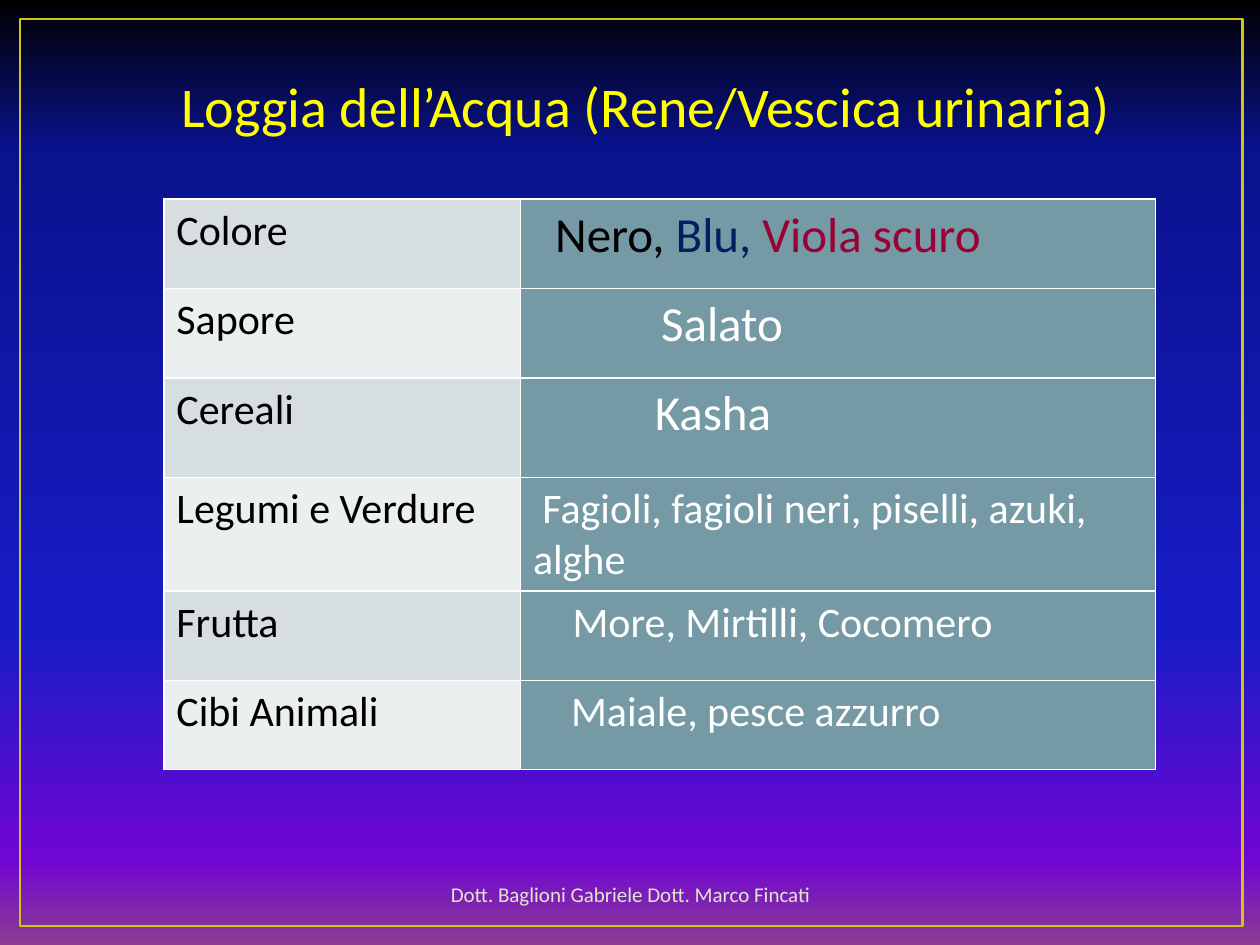
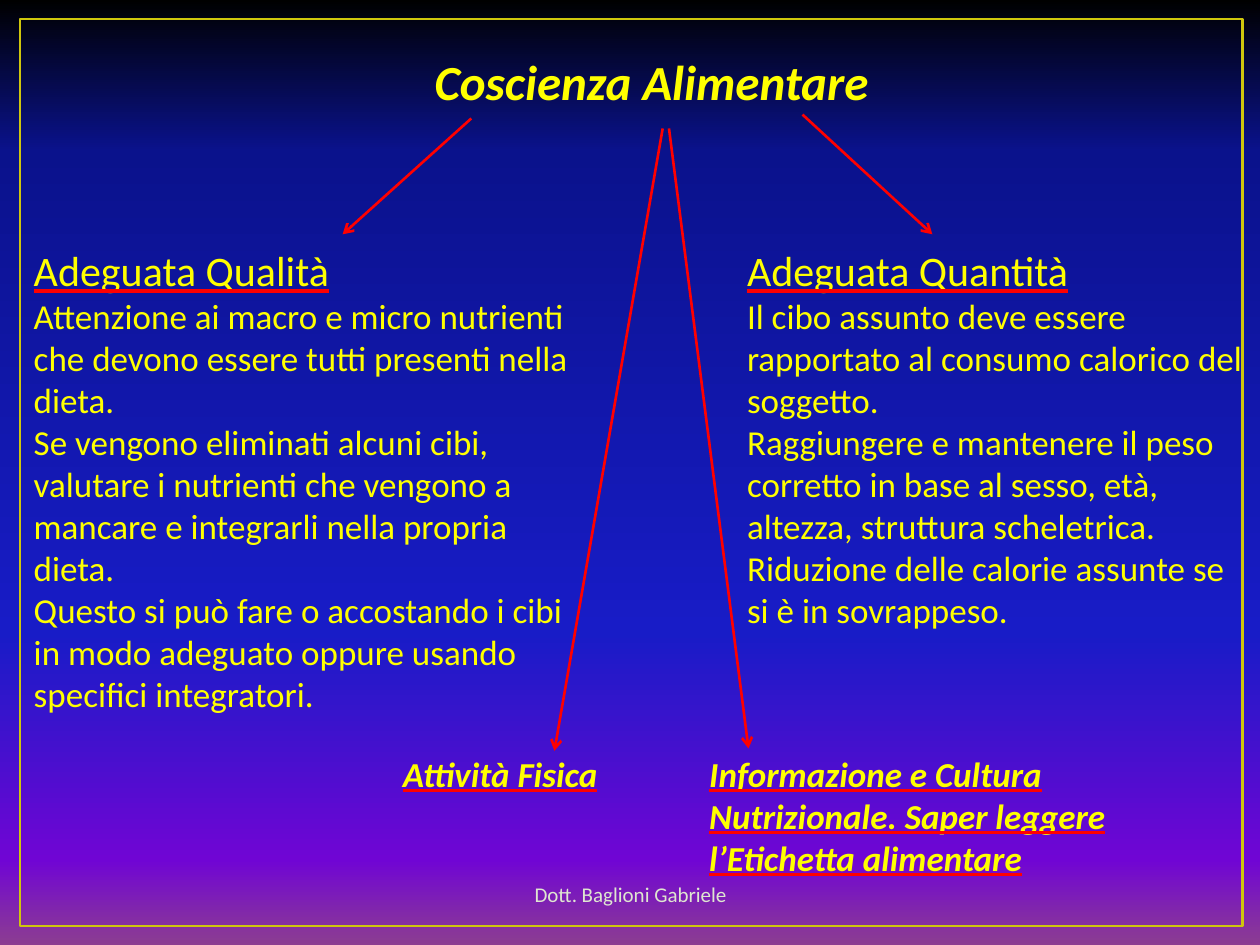
from typing import Any, NamedTuple

from lxml import etree
from pptx import Presentation
from pptx.dml.color import RGBColor
from pptx.enum import shapes, text
from pptx.oxml import ns
from pptx.util import Pt

BLACK = RGBColor(0, 0, 0)
WHITE = RGBColor(255, 255, 255)
YELLOW = RGBColor(255, 255, 0)
RED = RGBColor(255, 0, 0)
GOLD = RGBColor(0xCF, 0xC6, 0x0D)
PALE = RGBColor(0xDF, 0xE6, 0xD0)
NAVY = RGBColor(0, 0x20, 0x60)
WINE = RGBColor(0x99, 0, 0x33)
TEAL = RGBColor(0x75, 0x9A, 0xA5)
BANDS = [RGBColor(0xD6, 0xDE, 0xE1), RGBColor(0xEC, 0xEF, 0xF0)]
SKY = [
    (0, BLACK),
    (16, RGBColor(0x0A, 0x12, 0x8C)),
    (67, RGBColor(0x18, 0x1C, 0xC7)),
    (91, RGBColor(0x70, 0x05, 0xD4)),
    (100, RGBColor(0x8C, 0x3D, 0x91)),
]
FACE = "Calibri"
HEAD = {"size": Pt(24), "underline": True}
BODY = {"size": Pt(20)}
STRONG = {"size": Pt(20), "bold": True, "italic": True, "underline": True}


class Box(NamedTuple):
    left: float
    top: float
    width: float
    height: float


class Run(NamedTuple):
    words: str
    color: RGBColor
    form: dict[str, Any]


class Row(NamedTuple):
    label: str
    height: float
    indent: float
    runs: list[Run]


class Note(NamedTuple):
    box: Box
    lines: list[Run]


class Arrow(NamedTuple):
    x1: float
    y1: float
    x2: float
    y2: float


def apply(item: Any, form: dict[str, Any]) -> None:
    for name, value in form.items():
        setattr(item, name, value)


def node(parent: Any, tag: str, **attrs: str) -> Any:
    return etree.SubElement(parent, ns.qn(tag), attrs)


def solid(parent: Any, color: RGBColor) -> None:
    node(node(parent, "a:solidFill"), "a:srgbClr", val=str(color))


def write(para: Any, run: Run) -> None:
    part = para.add_run()
    part.text = run.words
    apply(part.font, {"name": FACE, "bold": False, **run.form})
    part.font.color.rgb = run.color
    if run.form.get("underline"):
        latin = part.font._element.find(ns.qn("a:latin"))
        under = etree.Element(ns.qn("a:uFill"))
        solid(under, RED)
        latin.addprevious(under)


def add_text(slide: Any, note: Note) -> Any:
    frame = slide.shapes.add_textbox(*map(Pt, note.box)).text_frame
    frame.word_wrap = True
    for i, run in enumerate(note.lines):
        para = frame.add_paragraph() if i else frame.paragraphs[0]
        write(para, run)
    return frame


def add_arrow(slide: Any, arrow: Arrow) -> None:
    link = slide.shapes.add_connector(
        shapes.MSO_CONNECTOR.STRAIGHT, *map(Pt, arrow))
    link.line.color.rgb = RED
    link.line.width = Pt(1.5)
    node(link.line._get_or_add_ln(), "a:tailEnd", type="arrow")
    node(link._element.spPr, "a:effectLst")


def add_page(deck: Any, credit: str) -> Any:
    slide = deck.slides.add_slide(deck.slide_layouts[6])
    fill = slide.background.fill
    fill.gradient()
    fill.gradient_angle = 270
    stops = slide.background._cSld.find(".//" + ns.qn("a:gsLst"))
    stops.clear()
    for place, color in SKY:
        stop = node(stops, "a:gs", pos=str(place * 1000))
        node(stop, "a:srgbClr", val=str(color))

    frame = slide.shapes.add_shape(
        shapes.MSO_SHAPE.RECTANGLE, *map(Pt, Box(11.5, 10.8, 698.4, 518.4)))
    frame.shadow.inherit = False
    frame.fill.background()
    frame.line.color.rgb = GOLD
    frame.line.width = Pt(1.5)

    foot = add_text(slide, Note(Box(223.2, 496.8, 274.3, 28.8),
                                [Run(credit, PALE, {"size": Pt(12)})]))
    foot.vertical_anchor = text.MSO_ANCHOR.MIDDLE
    foot.paragraphs[0].alignment = text.PP_ALIGN.CENTER
    return slide


def fill_cell(cell: Any, back: RGBColor, runs: list[Run], indent: float) -> None:
    props = cell._tc.get_or_add_tcPr()
    for side in ("a:lnL", "a:lnR", "a:lnT", "a:lnB"):
        solid(node(props, side, w=str(Pt(1))), WHITE)
    cell.fill.solid()
    cell.fill.fore_color.rgb = back
    para = cell.text_frame.paragraphs[0]
    if indent:
        apply_to = para._p.get_or_add_pPr()
        apply_to.set("marL", "0")
        apply_to.set("indent", str(Pt(indent)))
    for run in runs:
        write(para, run)


def add_grid(slide: Any, rows: list[Row]) -> None:
    high = sum(row.height for row in rows)
    grid = slide.shapes.add_table(
        len(rows), 2, *map(Pt, Box(93.6, 113.8, 566.6, high))).table
    apply(grid, {"first_row": False, "horz_banding": False})
    for col, width in zip(grid.columns, (203.8, 362.9)):
        col.width = Pt(width)
    for i, row in enumerate(rows):
        grid.rows[i].height = Pt(row.height)
        label = Run(row.label, BLACK, {"size": Pt(24)})
        fill_cell(grid.cell(i, 0), BANDS[i % 2], [label], 0)
        fill_cell(grid.cell(i, 1), TEAL, row.runs, row.indent)


def make_water(deck: Any) -> None:
    slide = add_page(deck, "Dott. Baglioni Gabriele Dott. Marco Fincati")
    title = Run("Loggia dell’Acqua (Rene/Vescica urinaria)", YELLOW,
                {"size": Pt(32)})
    add_text(slide, Note(Box(96.6, 37.4, 568.7, 46.1), [title]))
    big, mid = {"size": Pt(28)}, {"size": Pt(24)}
    add_grid(slide, [
        Row("Colore", 51.1, 12.7, [Run("Nero, ", BLACK, big),
                                   Run("Blu, ", NAVY, big),
                                   Run("Viola scuro", WINE, big)]),
        Row("Sapore", 51.1, 73.2, [Run("Salato", WHITE, big)]),
        Row("Cereali", 56.9, 69.6, [Run("Kasha", WHITE, big)]),
        Row("Legumi e Verdure", 51.1, 5.4, [
            Run("Fagioli, fagioli neri, piselli, azuki, alghe", WHITE, mid)]),
        Row("Frutta", 51.1, 22.6, [
            Run("More, Mirtilli, Cocomero", WHITE, mid)]),
        Row("Cibi Animali", 51.1, 21.7, [
            Run("Maiale, pesce azzurro", WHITE, mid)]),
    ])


def topic(box: Box, head: str, lines: list[str]) -> Note:
    body = [Run(line, YELLOW, BODY) for line in lines]
    return Note(box, [Run(head, YELLOW, HEAD), *body])


def make_mind(deck: Any) -> None:
    slide = add_page(deck, "Dott. Baglioni Gabriele")
    title = Run("Coscienza Alimentare", YELLOW,
                {"size": Pt(28), "bold": True, "italic": True})
    notes = [
        Note(Box(241.2, 25.9, 317.5, 41), [title]),
        topic(Box(12.2, 136.1, 334.8, 278.6), "Adeguata Qualità", [
            "Attenzione ai macro e micro nutrienti",
            "che devono essere tutti presenti nella",
            "dieta.",
            "Se vengono eliminati alcuni cibi, valutare i nutrienti che "
            "vengono a mancare e integrarli nella propria dieta.",
            "Questo si può fare o accostando i cibi",
            "in modo adeguato oppure usando",
            "specifici integratori.",
        ]),
        topic(Box(419.8, 136.1, 300.2, 230.4), "Adeguata Quantità", [
            "Il cibo assunto deve essere rapportato al consumo calorico "
            "del soggetto.",
            "Raggiungere e mantenere il peso",
            "corretto in base al sesso, età, altezza, struttura scheletrica.",
            "Riduzione delle calorie assunte se si è in sovrappeso.",
        ]),
        Note(Box(223.2, 426.2, 198.7, 31.7),
             [Run("Attività Fisica", YELLOW, STRONG)]),
        Note(Box(398.2, 426.2, 283.7, 79.9), [
            Run("Informazione e Cultura Nutrizionale. Saper leggere",
                YELLOW, STRONG),
            Run("l’Etichetta alimentare", YELLOW, STRONG)]),
    ]
    for note in notes:
        add_text(slide, note)
    for arrow in (Arrow(269.3, 67.7, 195.8, 133.9),
                  Arrow(458.6, 65.5, 532.8, 133.9),
                  Arrow(378.7, 73.4, 316.8, 429.1),
                  Arrow(382.3, 73.4, 427.7, 427.7)):
        add_arrow(slide, arrow)


def main() -> None:
    deck = Presentation()
    apply(deck, {"slide_width": Pt(720), "slide_height": Pt(540)})
    make_water(deck)
    make_mind(deck)
    deck.save("out.pptx")


if __name__ == "__main__":
    main()
